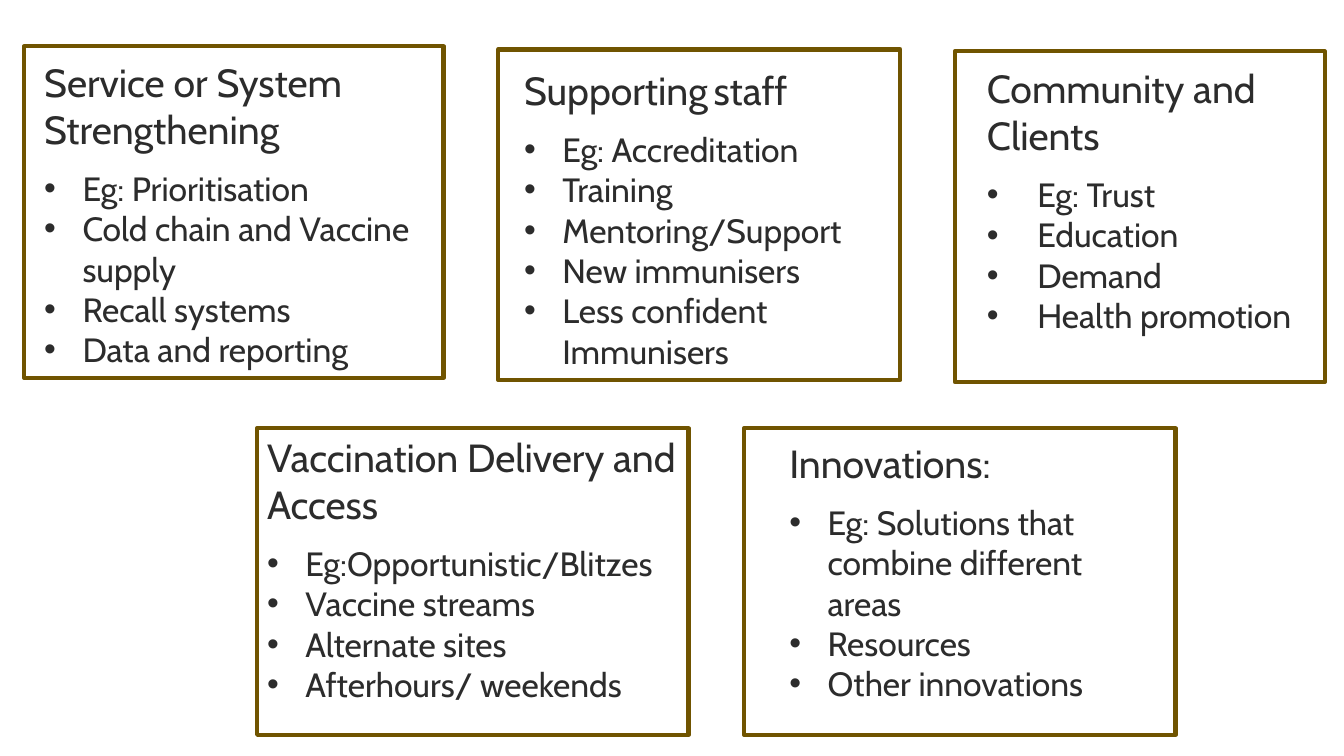
import pptx
import pptx.dml.color
import pptx.enum.shapes
import pptx.enum.text
import pptx.oxml
import pptx.oxml.ns
import pptx.util

Inches = pptx.util.Inches
Pt = pptx.util.Pt

FRAME_COLOUR = "705400"
HEADING = {"name": "Cabin", "size": Pt(28)}
NARROW_SPACE = {"name": "Cabin", "size": Pt(18)}
ITEM = {"name": "Cabin", "size": Pt(24)}
TEXT_COLOUR = "2C2C2C"

# Each theme: frame box, text offset inside the frame, text width,
# bullet indent, heading words, items.
THEMES = [
    ((0.24, 0.46, 4.16, 3.29), (0.1, 0.07), 3.89, 0.38,
     ["Service or System Strengthening"],
     ["Eg: Prioritisation", "Cold chain and Vaccine supply",
      "Recall systems", "Data and reporting"]),
    ((4.94, 0.49, 3.99, 3.28), (0.16, 0.12), 3.43, 0.38,
     ["Supporting", "staff"],
     ["Eg: Accreditation", "Training", "Mentoring/Support",
      "New immunisers", "Less confident Immunisers"]),
    ((9.47, 0.51, 3.67, 3.28), (0.22, 0.08), 3.43, 0.5,
     ["Community and Clients"],
     ["Eg: Trust", "Education", "Demand", "Health promotion"]),
    ((2.55, 4.25, 4.28, 3.04), (0, 0), 4.28, 0.38,
     ["Vaccination Delivery and Access"],
     ["Eg:Opportunistic/Blitzes", "Vaccine streams",
      "Alternate sites", "Afterhours/ weekends"]),
    ((7.38, 4.25, 4.28, 3.04), (0.35, 0.06), 3.29, 0.38,
     ["Innovations:"],
     ["Eg: Solutions that combine different areas",
      "Resources", "Other innovations"]),
]


def paint(colour_format, hex_colour):
    colour_format.rgb = pptx.dml.color.RGBColor.from_string(hex_colour)


def style(font, values):
    for attribute, value in values.items():
        setattr(font, attribute, value)
    paint(font.color, TEXT_COLOUR)


def add_bullet(paragraph, indent):
    properties = paragraph._p.get_or_add_pPr()
    properties.set("marL", str(Inches(indent)))
    properties.set("indent", str(-Inches(indent)))
    namespace = pptx.oxml.ns.nsdecls("a")
    for tag in ('buFont {} typeface="Arial"', 'buChar {} char="•"'):
        properties.append(pptx.oxml.parse_xml(f"<a:{tag.format(namespace)}/>"))


def add_frame(slide, box):
    frame = slide.shapes.add_shape(
        pptx.enum.shapes.MSO_SHAPE.RECTANGLE, *map(Inches, box))
    frame.shadow.inherit = False
    frame.fill.background()
    frame.line.width = Pt(3)
    paint(frame.line.color, FRAME_COLOUR)


def add_heading(paragraph, words):
    """Write the words with a narrower space between them."""
    paragraph.space_after = Pt(11)
    for position, word in enumerate(words):
        pieces = [(word, HEADING)]
        if position:
            pieces.insert(0, (" ", NARROW_SPACE))
        for text, values in pieces:
            run = paragraph.add_run()
            run.text = text
            style(run.font, values)


def add_theme(slide, box, offset, text_width, indent, heading, items):
    add_frame(slide, box)
    left, top, _, height = box
    right_shift, down_shift = offset
    body = slide.shapes.add_textbox(
        Inches(left + right_shift), Inches(top + down_shift),
        Inches(text_width), Inches(height - down_shift)).text_frame
    body.word_wrap = True
    body.auto_size = pptx.enum.text.MSO_AUTO_SIZE.NONE
    add_heading(body.paragraphs[0], heading)
    for item in items:
        paragraph = body.add_paragraph()
        add_bullet(paragraph, indent)
        run = paragraph.add_run()
        run.text = item
        style(run.font, ITEM)


def main():
    deck = pptx.Presentation()
    deck.slide_width = Inches(13.33)
    deck.slide_height = Inches(7.5)
    slide = deck.slides.add_slide(deck.slide_layouts[6])
    for theme in THEMES:
        add_theme(slide, *theme)
    deck.save("out.pptx")


if __name__ == "__main__":
    main()
